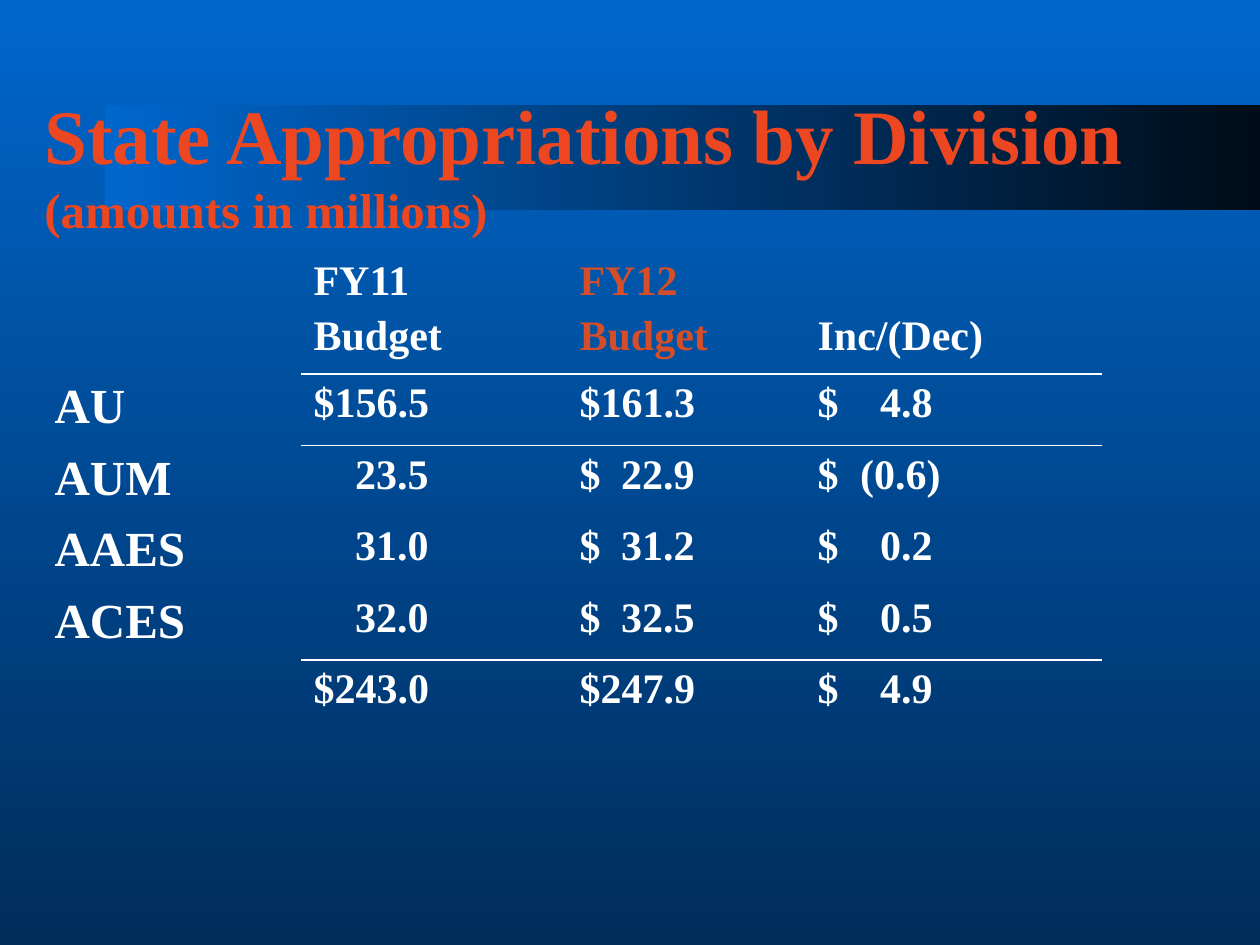
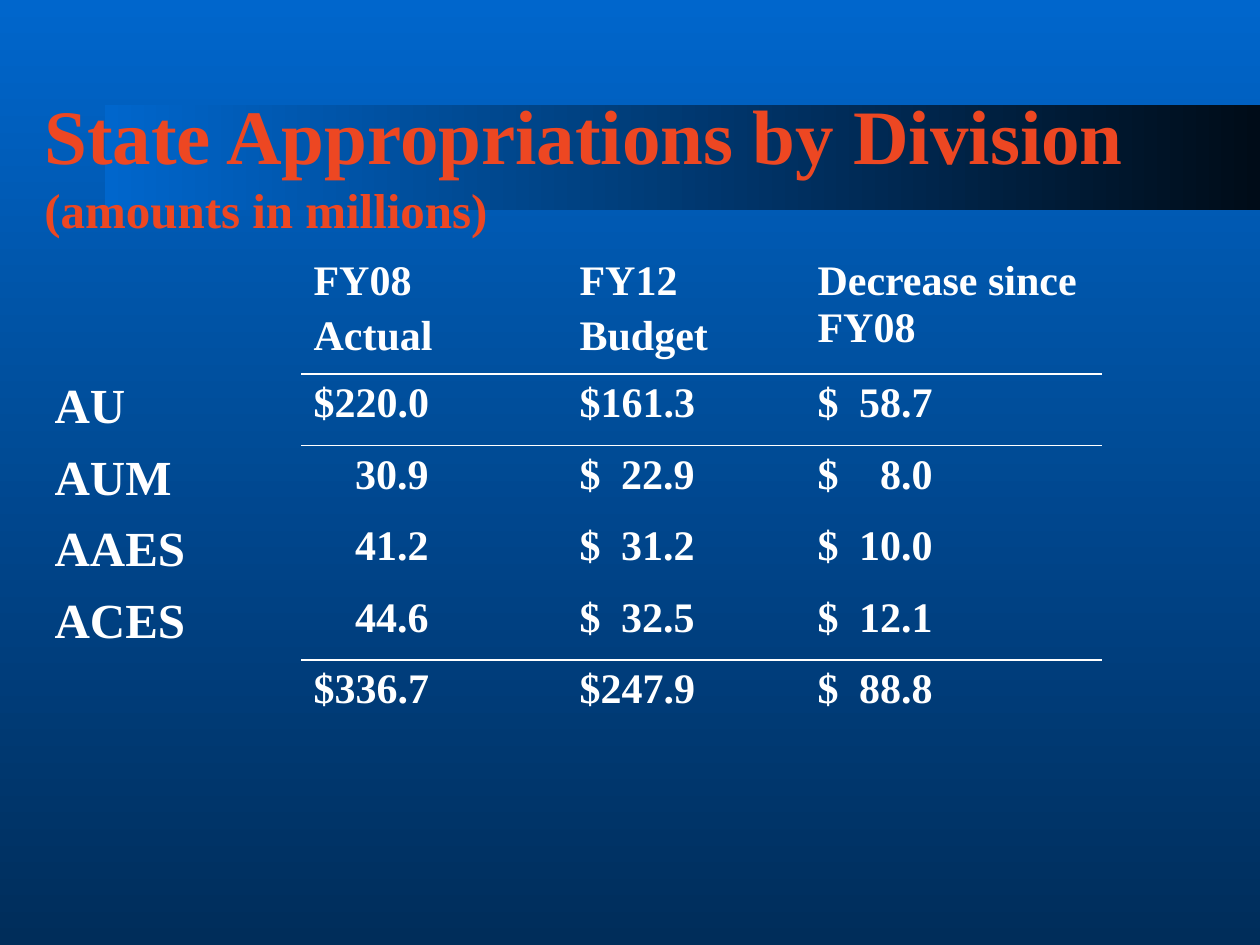
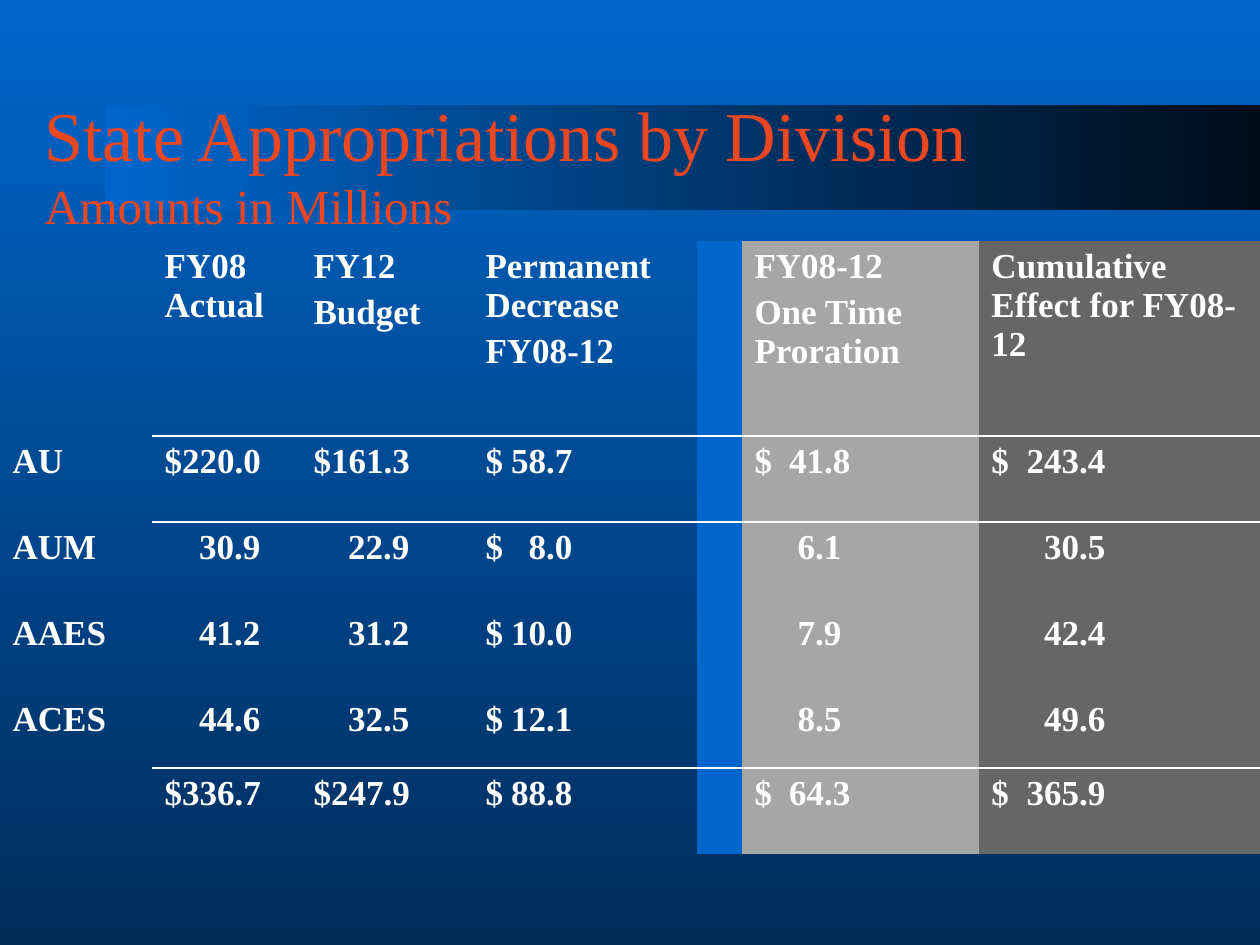
from lxml import etree
from pptx import Presentation
from pptx.dml.color import RGBColor
from pptx.enum.shapes import MSO_SHAPE as SHAPE
from pptx.enum.text import MSO_ANCHOR as ANCHOR
from pptx.oxml.ns import qn
from pptx.util import Emu, Pt

FONT = "Times New Roman"
BLUE, NAVY, NIGHT = "0066CC", "002D5A", "000C18"
TITLE_COLOR, ACCENT, WHITE = "ED4722", "D54E29", "FFFFFF"
LIGHT_GRAY, DARK_GRAY = "A6A6A6", "666666"
NO_STYLE = "{2D5ABB26-0587-4C30-8999-92F81FD0307C}"
RULED_ROWS = (0, 4)  # rows with a line below them

TITLE = "State Appropriations by Division"
DIVISIONS = ["AU", "AUM", "AAES", "ACES", ""]
FY08 = ["$220.0", "\t30.9", "\t41.2", "\t44.6", "$336.7"]
FY12 = ["$161.3", "$\t22.9", "$\t31.2", "$\t32.5", "$247.9"]

# Column: header lines, amounts, width, then options.
# tab is the right edge of the amounts, plain_tab that of amounts without $.
LABELS = dict(header=[], cells=DIVISIONS, width=259, size=28)
THREE_COLUMNS = dict(
    subtitle="(amounts in millions)", title_size=44, bold=True,
    left=42, top=252, size=24, rows=[122, 66, 68, 67, 69, 60])

SLIDES = [
    dict(THREE_COLUMNS, columns=[
        LABELS,
        dict(header=["FY11", "Budget"], width=266, tab=115,
             cells=["$156.5", "\t23.5", "\t31.0", "\t32.0", "$243.0"]),
        dict(header=["FY12", "Budget"], width=238, tab=115, cells=FY12,
             header_color=ACCENT),
        dict(header=["", "Inc/(Dec)"], width=297, tab=115,
             cells=["$\t4.8", "$\t(0.6)", "$\t0.2", "$\t0.5", "$\t4.9"]),
    ]),
    dict(THREE_COLUMNS, columns=[
        LABELS,
        dict(header=["FY08", "Actual"], width=266, tab=115, cells=FY08),
        dict(header=["FY12", "Budget"], width=238, tab=115, cells=FY12),
        dict(header=["Decrease since FY08"], width=297, tab=115,
             cells=["$\t58.7", "$\t8.0", "$\t10.0", "$\t12.1", "$\t88.8"]),
    ]),
    dict(subtitle="Amounts in Millions", title_size=40, bold=False,
         left=0, top=241, size=20, rows=[195, 86, 86, 86, 74, 86], columns=[
        dict(header=[], cells=DIVISIONS, width=152),
        dict(header=["FY08 Actual"], width=149, tab=96, cells=FY08),
        dict(header=["FY12", "Budget"], width=172, tab=96,
             cells=[amount.replace("$\t", "\t") for amount in FY12]),
        dict(header=["Permanent Decrease", "FY08-12"], width=224, tab=87,
             cells=["$\t58.7", "$\t8.0", "$\t10.0", "$\t12.1", "$\t88.8"]),
        dict(header=[], cells=[""] * 5, width=45, fill=BLUE),
        dict(header=["FY08-12", "One Time Proration"], width=237, tab=96,
             plain_tab=87, fill=LIGHT_GRAY,
             cells=["$\t41.8", "\t6.1", "\t7.9", "\t8.5", "$\t64.3"]),
        dict(header=["Cumulative Effect for FY08-12"], width=281, tab=114,
             fill=DARK_GRAY,
             cells=["$\t243.4", "\t30.5", "\t42.4", "\t49.6", "$\t365.9"]),
    ]),
]


def px(length):
    return Emu(round(length * 914400 / 126))


def rgb(color):
    return RGBColor.from_string(color)


def set_gradient(fill, start, end, angle):
    fill.gradient()
    fill.gradient_angle = angle
    for stop, color, position in zip(fill.gradient_stops, (start, end), (0, 1)):
        stop.color.rgb = rgb(color)
        stop.position = position


def set_font(font, color, bold, size=None):
    font.name = FONT
    font.color.rgb = rgb(color)
    font.bold = bold
    if size:
        font.size = Pt(size)


def add_backdrop(slide):
    set_gradient(slide.background.fill, BLUE, NAVY, 270)
    band = slide.shapes.add_shape(SHAPE.RECTANGLE, px(105), px(105), px(1155), px(105))
    band.shadow.inherit = False
    band.line.fill.background()
    set_gradient(band.fill, BLUE, NIGHT, 0)


def add_title(slide, content):
    box = slide.shapes.add_textbox(px(32), px(84), px(1134), px(158))
    frame = box.text_frame
    frame.word_wrap = True
    frame.vertical_anchor = ANCHOR.MIDDLE
    paragraph = frame.paragraphs[0]
    set_font(paragraph.font, TITLE_COLOR, content["bold"])
    title = paragraph.add_run()
    title.text = TITLE
    title.font.size = Pt(content["title_size"])
    paragraph.add_line_break()
    subtitle = paragraph.add_run()
    subtitle.text = content["subtitle"]
    subtitle.font.size = Pt(28)


def add_right_tab(paragraph, position):
    tabs = etree.SubElement(paragraph._p.get_or_add_pPr(), qn("a:tabLst"))
    etree.SubElement(tabs, qn("a:tab"), pos=str(px(position)), algn="r")


def add_rule(cell, side):
    """Draw a white line on side lnT or lnB, ahead of the cell's fill."""
    properties = cell._tc.get_or_add_tcPr()
    line = etree.Element(qn("a:" + side), w=str(Pt(1)))
    fill = etree.SubElement(line, qn("a:solidFill"))
    etree.SubElement(fill, qn("a:srgbClr"), val=WHITE)
    properties.insert(0, line)


def fill_header(cell, column, size):
    lines = column["header"]
    if lines and not lines[0]:
        lines = lines[1:]
        cell.margin_top = px(61)  # start level with the second line
    for index, line in enumerate(lines):
        frame = cell.text_frame
        paragraph = frame.add_paragraph() if index else frame.paragraphs[0]
        paragraph.text = line
        if index:
            paragraph.space_before = Pt(size * 0.2)
        set_font(paragraph.font, column.get("header_color", WHITE), True, size)


def fill_amount(cell, text, column, size):
    paragraph = cell.text_frame.paragraphs[0]
    paragraph.text = text
    if "\t" in text:
        tab = column["tab"]
        if text.startswith("\t"):
            tab = column.get("plain_tab", tab)
        hang = 8 if text.endswith(")") else 0
        add_right_tab(paragraph, tab + hang)
    set_font(paragraph.font, WHITE, True, column.get("size", size))


def add_budget_table(slide, content):
    columns, rows, size = content["columns"], content["rows"], content["size"]
    width = sum(column["width"] for column in columns)
    table = slide.shapes.add_table(
        len(rows), len(columns), px(content["left"]), px(content["top"]),
        px(width), px(sum(rows))).table
    table.first_row = table.horz_banding = False
    table._tbl.tblPr.find(qn("a:tableStyleId")).text = NO_STYLE
    for row, height in zip(table.rows, rows):
        row.height = px(height)
    for column_index, column in enumerate(columns):
        table.columns[column_index].width = px(column["width"])
        for row_index in range(len(rows)):
            cell = table.cell(row_index, column_index)
            if row_index == 0:
                fill_header(cell, column, size)
            elif column["cells"][row_index - 1]:
                fill_amount(cell, column["cells"][row_index - 1], column, size)
            if "fill" in column:
                cell.fill.solid()
                cell.fill.fore_color.rgb = rgb(column["fill"])
            else:
                cell.fill.background()
            if column_index and row_index in RULED_ROWS:
                add_rule(cell, "lnB")
            if column_index and row_index - 1 in RULED_ROWS:
                add_rule(cell, "lnT")


def main():
    presentation = Presentation()
    presentation.slide_width, presentation.slide_height = px(1260), px(945)
    for content in SLIDES:
        slide = presentation.slides.add_slide(presentation.slide_layouts[6])
        add_backdrop(slide)
        add_title(slide, content)
        add_budget_table(slide, content)
    presentation.save("out.pptx")


if __name__ == "__main__":
    main()
